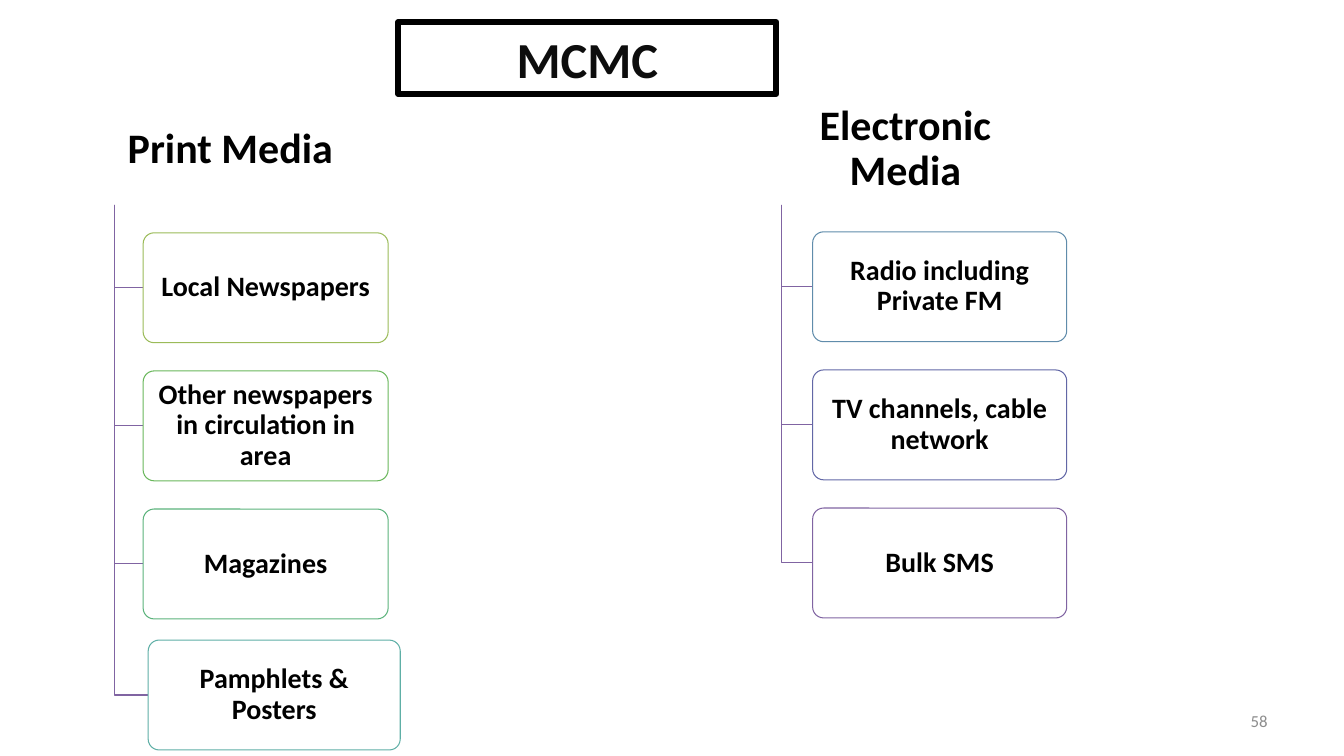
from dataclasses import dataclass

from lxml.etree import SubElement
from pptx import Presentation
from pptx.dml.color import RGBColor
from pptx.enum.shapes import MSO_SHAPE
from pptx.enum.text import MSO_ANCHOR, PP_ALIGN
from pptx.oxml.ns import qn
from pptx.util import Inches, Pt


@dataclass(frozen=True)
class Theme:
    """Colours, font and type sizes of the slide."""

    font: str = "Calibri"
    white: str = "FFFFFF"
    black: str = "000000"
    title: str = "0D0D0D"
    muted: str = "8C8C8C"
    branch: str = "8064A2"
    print_items: tuple = ("9BBB59", "69B75B", "5CB37C", "5EAFA6")
    electronic_items: tuple = ("608CAB", "6267A6", "8064A2")
    title_size: int = 36
    heading_size: int = 30
    item_size: int = 20
    number_size: int = 12


class MediaSlide:
    """Draws the elements of a media tree on one slide."""

    def __init__(self, s, theme):
        self.s = s
        self.theme = theme

    def set_text(self, sp, text, size, color, bold=True, align=PP_ALIGN.CENTER,
                 inset=(0.1, 0.05), spacing=None):
        """Fill a shape with one middle-anchored paragraph."""
        tf = sp.text_frame
        tf.word_wrap = True
        tf.vertical_anchor = MSO_ANCHOR.MIDDLE
        tf.margin_left = tf.margin_right = Inches(inset[0])
        tf.margin_top = tf.margin_bottom = Inches(inset[1])
        p = tf.paragraphs[0]
        p.text = text
        p.alignment = align
        if spacing:
            p.line_spacing = spacing
        font = p.runs[0].font
        font.name = self.theme.font
        font.size = Pt(size)
        font.bold = bold
        font.color.rgb = RGBColor.from_string(color)

    def text(self, box, text, size, color, **style):
        """Add a text box."""
        sp = self.s.shapes.add_textbox(*map(Inches, box))
        self.set_text(sp, text, size, color, **style)

    def shape(self, kind, box, line, width):
        """Add a white outlined shape."""
        sp = self.s.shapes.add_shape(kind, *map(Inches, box))
        sp.shadow.inherit = False
        sp.fill.solid()
        sp.fill.fore_color.rgb = RGBColor.from_string(self.theme.white)
        sp.line.color.rgb = RGBColor.from_string(line)
        sp.line.width = Pt(width)
        return sp

    def title(self, box, text):
        """Add the framed title."""
        sp = self.shape(MSO_SHAPE.RECTANGLE, box, self.theme.black, 4.5)
        self.set_text(sp, text, self.theme.title_size, self.theme.title)

    def heading(self, box, text):
        """Add the heading of a branch."""
        self.text(box, text, self.theme.heading_size, self.theme.black,
                  inset=(0.06, 0.04), spacing=0.9)

    def elbow(self, x, y, end_x, end_y):
        """Add a line that runs down and then right."""
        fb = self.s.shapes.build_freeform(Inches(x), Inches(y))
        fb.add_line_segments([(Inches(x), Inches(end_y)),
                              (Inches(end_x), Inches(end_y))], close=False)
        sp = fb.convert_to_shape()
        sp.shadow.inherit = False
        sp.fill.background()
        sp.line.color.rgb = RGBColor.from_string(self.theme.branch)
        sp.line.width = Pt(0.75)

    def item(self, trunk_x, box, text, color):
        """Add a rounded item joined to its trunk."""
        left, top, _, height = box
        self.elbow(trunk_x, 2.03, left, top + height / 2)
        sp = self.shape(MSO_SHAPE.ROUNDED_RECTANGLE, box, color, 0.75)
        sp.adjustments[0] = 0.1
        for clr in sp._element.spPr.find(qn("a:solidFill")):
            SubElement(clr, qn("a:alpha")).set("val", "90000")
        self.set_text(sp, text, self.theme.item_size, self.theme.black,
                      inset=(0.04, 0.03), spacing=0.9)

    def items(self, trunk_x, left, top, width, texts, colors):
        """Add evenly spaced items along a trunk."""
        pitch = 1.37
        for i, (text, color) in enumerate(zip(texts, colors)):
            self.item(trunk_x, (left, top + i * pitch, width, 1.09), text, color)

    def number(self, box, text):
        """Add the slide number."""
        self.text(box, text, self.theme.number_size, self.theme.muted,
                  bold=False, align=PP_ALIGN.RIGHT)


def main():
    """Build and save the slide."""
    prs = Presentation()
    prs.slide_width, prs.slide_height = Inches(13.33), Inches(7.5)
    theme = Theme()
    media = MediaSlide(prs.slides.add_slide(prs.slide_layouts[6]), theme)

    media.heading((0.88, 0.97, 2.81, 1.03), "Print Media")
    media.items(1.14, 1.42, 2.31, 2.43,
                ["Local Newspapers", "Other newspapers in circulation in area",
                 "Magazines"], theme.print_items)
    media.item(1.14, (1.47, 6.35, 2.5, 1.09), "Pamphlets & Posters",
               theme.print_items[-1])

    media.heading((7.47, 0.97, 3.02, 1.03), "Electronic Media")
    media.items(7.75, 8.06, 2.3, 2.52,
                ["Radio including Private FM", "TV channels, cable network",
                 "Bulk SMS"], theme.electronic_items)

    media.title((3.95, 0.22, 3.75, 0.71), "MCMC")
    media.number((9.56, 6.95, 3.11, 0.4), "58")
    prs.save("out.pptx")


if __name__ == "__main__":
    main()
